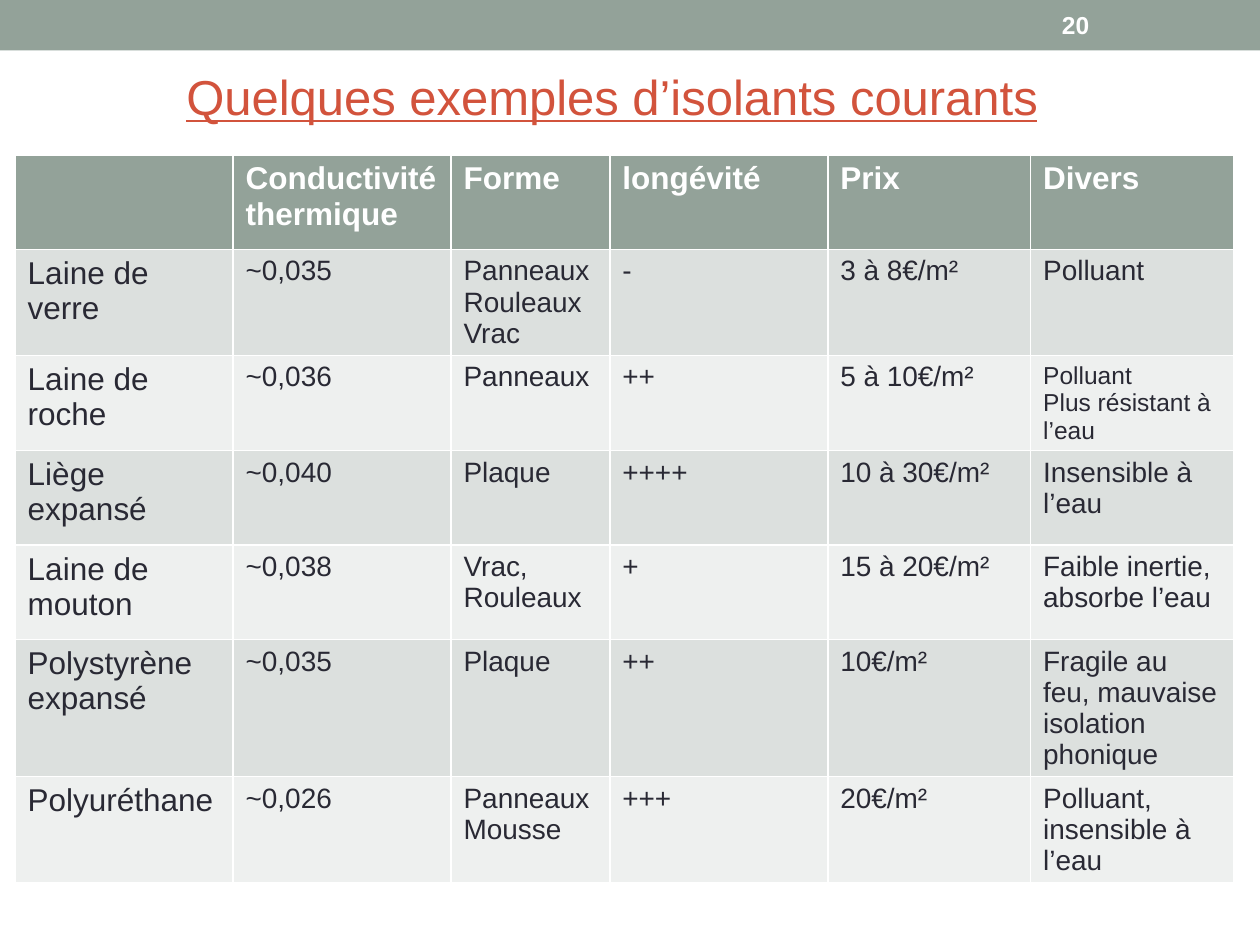
"""Build a slide comparing common insulation materials in a table."""
from pptx import Presentation
from pptx.dml.color import RGBColor
from pptx.enum.shapes import MSO_SHAPE
from pptx.enum.text import MSO_ANCHOR, MSO_AUTO_SIZE
from pptx.util import Inches, Pt

SAGE = RGBColor(0x93, 0xA2, 0x99)
DARK_BAND = RGBColor(0xDC, 0xE0, 0xDE)
LIGHT_BAND = RGBColor(0xEE, 0xF0, 0xEF)
INK = RGBColor(0x29, 0x29, 0x34)
BRICK = RGBColor(0xD2, 0x53, 0x3C)
WHITE = RGBColor(0xFF, 0xFF, 0xFF)

COLUMN_WIDTHS = [1.73, 1.73, 1.26, 1.73, 1.61, 1.61]
ROW_HEIGHT = 0.75
ROWS = [
    ["", "Conductivité thermique", "Forme", "longévité", "Prix", "Divers"],
    ["Laine de verre", "~0,035", "Panneaux\vRouleaux\nVrac", "-", "3 à 8€/m²", "Polluant"],
    ["Laine de roche", "~0,036", "Panneaux", "++", "5 à 10€/m²",
     "Polluant\nPlus résistant à l’eau"],
    ["Liège expansé", "~0,040", "Plaque", "++++", "10 à 30€/m²", "Insensible à l’eau"],
    ["Laine de mouton", "~0,038", "Vrac, Rouleaux", "+", "15 à 20€/m²",
     "Faible inertie, absorbe l’eau"],
    ["Polystyrène expansé", "~0,035", "Plaque", "++", "10€/m²",
     "Fragile au feu, mauvaise isolation phonique"],
    ["Polyuréthane", "~0,026", "Panneaux\nMousse", "+++", "20€/m²",
     "Polluant, insensible à l’eau"],
]
SMALL_CELL = (2, 5)


def write(text_frame, text, size, color, bold=False, underline=False):
    text_frame.text = text
    for para in text_frame.paragraphs:
        for span in para.runs:
            span.font.name = "Arial"
            span.font.size = Pt(size)
            span.font.color.rgb = color
            span.font.bold = bold
            span.font.underline = underline


deck = Presentation()
deck.slide_width = Inches(10)
deck.slide_height = Inches(7.5)
page = deck.slides.add_slide(deck.slide_layouts[6])

banner = page.shapes.add_shape(MSO_SHAPE.RECTANGLE, 0, 0, Inches(10), Inches(0.4))
banner.shadow.inherit = False
banner.fill.solid()
banner.fill.fore_color.rgb = SAGE
banner.line.fill.background()

table = page.shapes.add_table(
    len(ROWS), len(COLUMN_WIDTHS), Inches(0.12), Inches(1.23),
    Inches(sum(COLUMN_WIDTHS)), Inches(ROW_HEIGHT * len(ROWS)),
).table
for column, width in zip(table.columns, COLUMN_WIDTHS):
    column.width = Inches(width)

for row_index, texts in enumerate(ROWS):
    table.rows[row_index].height = Inches(ROW_HEIGHT)
    is_header = row_index == 0
    band = SAGE if is_header else DARK_BAND if row_index % 2 else LIGHT_BAND
    for column_index, text in enumerate(texts):
        cell = table.cell(row_index, column_index)
        cell.fill.solid()
        cell.fill.fore_color.rgb = band
        if (row_index, column_index) == SMALL_CELL:
            size = 14
        else:
            size = 18 if is_header or column_index == 0 else 16
        write(cell.text_frame, text, size, WHITE if is_header else INK, bold=is_header)

title = page.shapes.add_textbox(Inches(1.38), Inches(0.48), Inches(7.05), Inches(0.57))
title.text_frame.word_wrap = False
title.text_frame.auto_size = MSO_AUTO_SIZE.SHAPE_TO_FIT_TEXT
write(title.text_frame, "Quelques exemples d’isolants courants", 28, BRICK, underline=True)

number = page.shapes.add_textbox(Inches(8.33), Inches(0.02), Inches(1.17), Inches(0.36))
number.text_frame.word_wrap = True
number.text_frame.vertical_anchor = MSO_ANCHOR.MIDDLE
write(number.text_frame, "20", 14, WHITE, bold=True)

deck.save("out.pptx")
